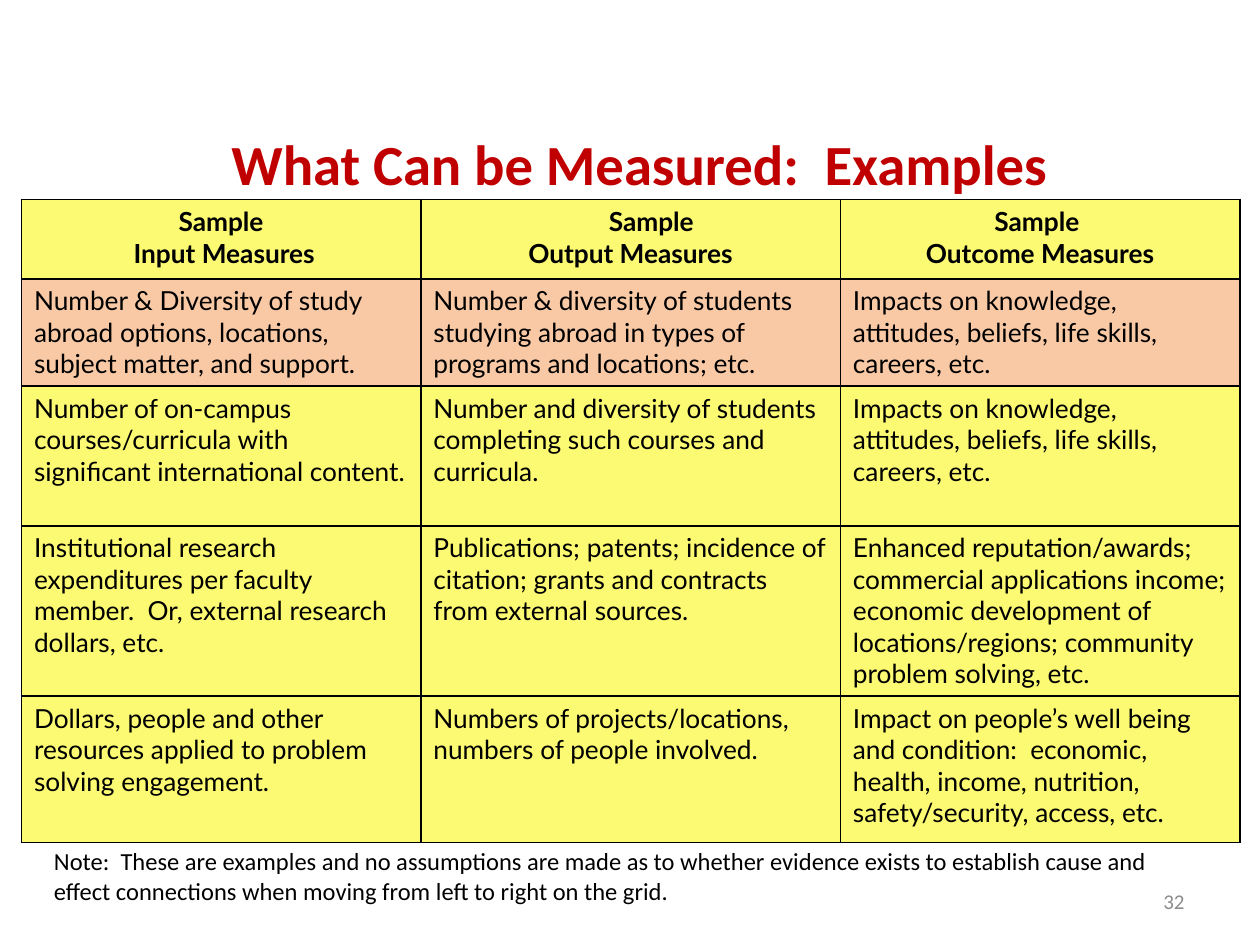
from lxml.etree import SubElement
from pptx import Presentation
from pptx.dml.color import RGBColor
from pptx.enum.text import MSO_ANCHOR, PP_ALIGN
from pptx.oxml.ns import qn
from pptx.util import Inches, Pt

COLORS = {
    "title": "C00000",
    "ink": "000000",
    "page": "8C8C8C",
    "yellow": "FCF973",
    "peach": "F9C9A5",
}
WIDTH, HEIGHT = 10, 7.5
COLUMN_SHARES = [0.317, 0.333, 0.317]
ROW_SHARES = [0.084, 0.112, 0.148, 0.18, 0.155]

HEADINGS = [
    ["Sample", " Input Measures"],
    ["\tSample ", "Output Measures"],
    ["Sample ", "Outcome Measures"],
]
MEASURES = [
    [
        "Number & Diversity of study abroad options, locations, subject matter, and support.",
        "Number & diversity of students studying abroad in types of programs and locations; etc.",
        "Impacts on knowledge, attitudes, beliefs, life skills, careers, etc.",
    ],
    [
        "Number of on-campus courses/curricula with significant international content.",
        "Number and diversity of students completing such courses and curricula.",
        "Impacts on knowledge, attitudes, beliefs, life skills, careers, etc.",
    ],
    [
        "Institutional research expenditures per faculty member.  Or, external research dollars, etc.",
        "Publications; patents; incidence of citation; grants and contracts from external sources.",
        "Enhanced reputation/awards; commercial applications income; economic development of "
        "locations/regions; community problem solving, etc.",
    ],
    [
        "Dollars, people and other resources applied to problem solving engagement.",
        "Numbers of projects/locations, numbers of people involved.",
        "Impact on people’s well being and condition:  economic, health, income, nutrition, "
        "safety/security, access, etc.",
    ],
]
NOTE = (
    "Note:  These are examples and no assumptions are made as to whether evidence exists "
    "to establish cause and effect connections when moving from left to right on the grid."
)


class MeasureSlide:
    def __init__(self, slide):
        self.slide = slide
        self.body_font = "Calibri"
        self.table_font = "Lato"
        self.table_size = 15

    def box(self, left, top, width, height):
        return (
            Inches(left * WIDTH),
            Inches(top * HEIGHT),
            Inches(width * WIDTH),
            Inches(height * HEIGHT),
        )

    def add_wording(self, paragraph, wording, size, font, color="ink", bold=False):
        run = paragraph.add_run()
        run.text = wording
        run.font.size = Pt(size)
        run.font.name = font
        run.font.bold = bold
        run.font.color.rgb = RGBColor.from_string(COLORS[color])

    def text(self, area, wording, size, color="ink", bold=False,
             align=PP_ALIGN.LEFT, anchor=MSO_ANCHOR.TOP):
        frame = self.slide.shapes.add_textbox(*self.box(*area)).text_frame
        frame.word_wrap = True
        frame.vertical_anchor = anchor
        paragraph = frame.paragraphs[0]
        paragraph.alignment = align
        self.add_wording(paragraph, wording, size, self.body_font, color, bold)

    def hang(self, paragraph):
        paragraph.alignment = PP_ALIGN.CENTER
        properties = paragraph._p.get_or_add_pPr()
        properties.set("marL", str(Inches(0.38)))
        properties.set("indent", str(Inches(-0.38)))
        stops = SubElement(properties, qn("a:tabLst"))
        SubElement(stops, qn("a:tab"), pos=str(Inches(1.01)), algn="ctr")

    def border(self, cell):
        properties = cell._tc.get_or_add_tcPr()
        for side in ("lnL", "lnR", "lnT", "lnB"):
            line = SubElement(properties, qn(f"a:{side}"), w=str(Pt(1)))
            fill = SubElement(line, qn("a:solidFill"))
            SubElement(fill, qn("a:srgbClr"), val=COLORS["ink"])

    def cell(self, cell, lines, fill, heading):
        self.border(cell)
        cell.fill.solid()
        cell.fill.fore_color.rgb = RGBColor.from_string(COLORS[fill])
        frame = cell.text_frame
        for index, wording in enumerate(lines):
            paragraph = frame.add_paragraph() if index else frame.paragraphs[0]
            if heading:
                self.hang(paragraph)
            self.add_wording(paragraph, wording, self.table_size, self.table_font, bold=heading)

    def table(self, left, top, rows):
        area = self.box(left, top, sum(COLUMN_SHARES), sum(ROW_SHARES))
        grid = self.slide.shapes.add_table(len(rows), len(COLUMN_SHARES), *area).table
        for column, share in zip(grid.columns, COLUMN_SHARES):
            column.width = Inches(share * WIDTH)
        for row, share in zip(grid.rows, ROW_SHARES):
            row.height = Inches(share * HEIGHT)
        for r, row in enumerate(rows):
            for c, lines in enumerate(row):
                fill = "peach" if r == 1 else "yellow"
                self.cell(grid.cell(r, c), lines, fill, heading=r == 0)


def main():
    deck = Presentation()
    deck.slide_width = Inches(WIDTH)
    deck.slide_height = Inches(HEIGHT)
    page = MeasureSlide(deck.slides.add_slide(deck.slide_layouts[6]))

    page.text((0.042, 0.144, 0.931, 0.056), "What Can be Measured:  Examples", 32.4,
              "title", True, PP_ALIGN.CENTER, MSO_ANCHOR.MIDDLE)
    page.table(0.017, 0.211, [HEADINGS] + [[[entry] for entry in row] for row in MEASURES])
    page.text((0.717, 0.927, 0.233, 0.053), "32", 12, "page",
              align=PP_ALIGN.RIGHT, anchor=MSO_ANCHOR.MIDDLE)
    page.text((0.033, 0.889, 0.925, 0.076), NOTE, 14)
    deck.save("out.pptx")


if __name__ == "__main__":
    main()
